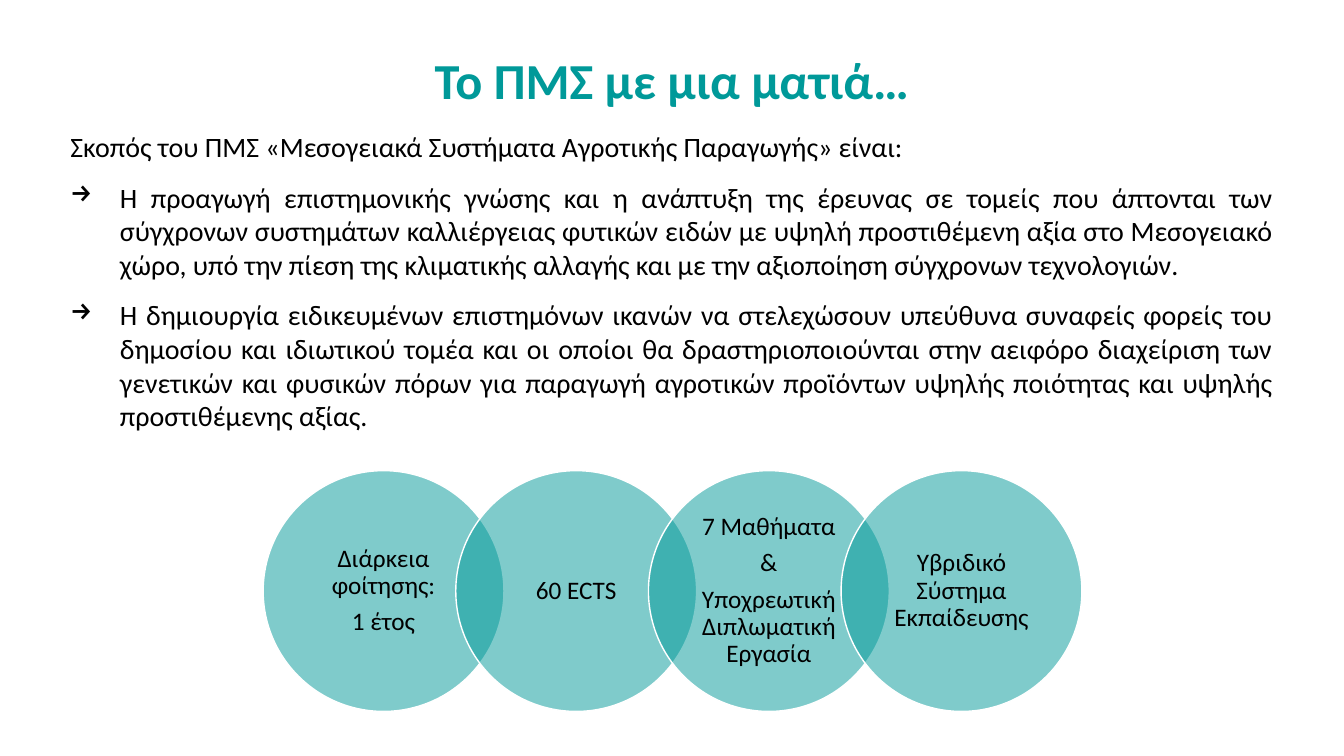
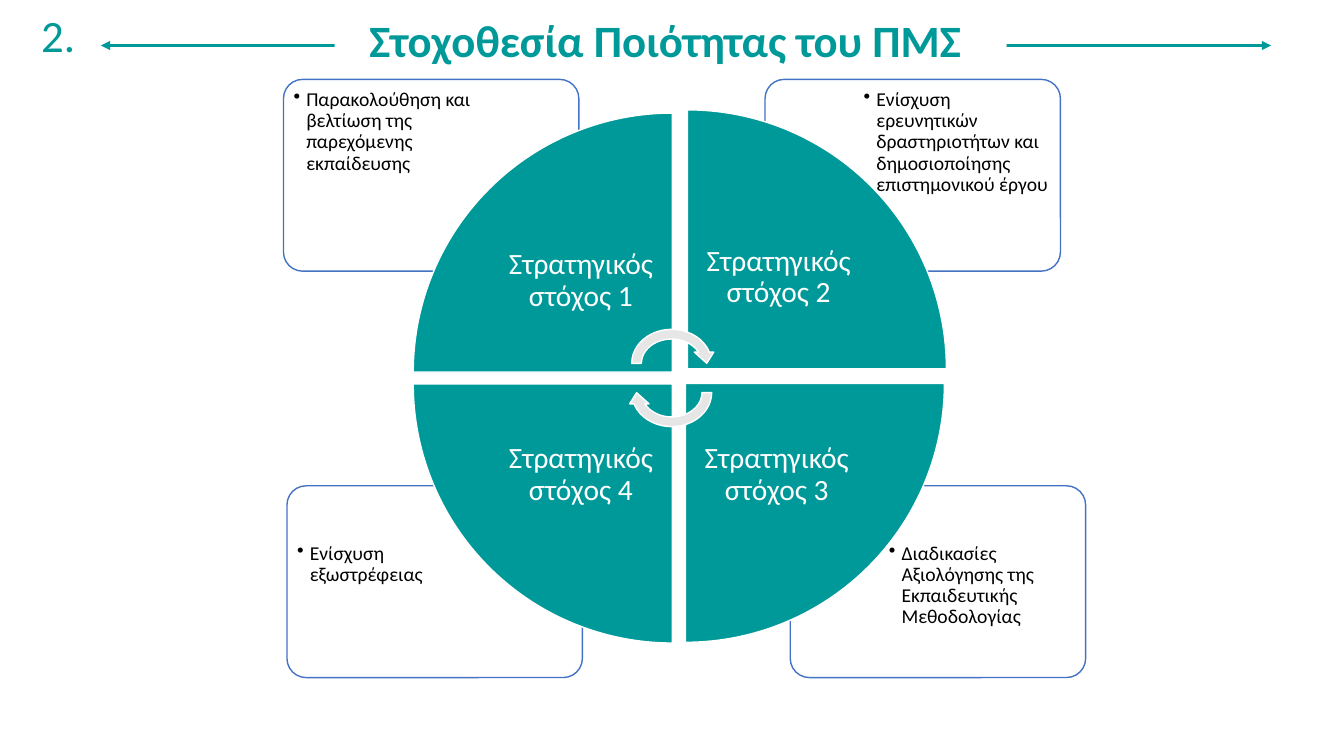
from dataclasses import dataclass
from typing import Sequence

from lxml.etree import SubElement
from pptx import Presentation
from pptx.dml.color import RGBColor
from pptx.enum.shapes import MSO_CONNECTOR, MSO_SHAPE
from pptx.enum.text import MSO_ANCHOR, MSO_AUTO_SIZE, PP_ALIGN
from pptx.oxml.ns import qn
from pptx.shapes.autoshape import Shape
from pptx.slide import Slide
from pptx.util import Pt


@dataclass(frozen=True)
class Theme:
    teal: str = "009999"
    blue: str = "4472C4"
    grey: str = "E7E6E6"
    black: str = "000000"
    white: str = "FFFFFF"
    font: str = "Calibri"
    opening_title: int = 36
    heading: int = 32
    goal: int = 21
    body: int = 20
    fact: int = 18
    card: int = 14


THEME = Theme()
BOX_INSETS = (7.2, 3.6, 7.2, 3.6)


@dataclass(frozen=True)
class Box:
    left: float
    top: float
    width: float
    height: float

    def lengths(self) -> tuple[Pt, Pt, Pt, Pt]:
        return Pt(self.left), Pt(self.top), Pt(self.width), Pt(self.height)


@dataclass(frozen=True)
class Card:
    left: float
    top: float
    text: str
    on_right: bool
    at_bottom: bool


@dataclass(frozen=True)
class Goal:
    left: float
    top: float
    rotation: int
    on_right: bool
    at_bottom: bool


# Shared helpers
def write(shape: Shape, paragraphs: Sequence[str], *, size: float,
          color: str = THEME.black, bold: bool = False,
          align: PP_ALIGN = PP_ALIGN.CENTER,
          anchor: MSO_ANCHOR = MSO_ANCHOR.TOP,
          insets: tuple[float, float, float, float] = BOX_INSETS,
          line_spacing: float = 1.0, space_after: float = 0,
          bullet: str = "", indent: float = 0, plain_lead: int = 0,
          wrap: bool = True) -> None:
    """Fill a shape with text; the first plain_lead paragraphs get no bullet."""
    frame = shape.text_frame
    frame.auto_size = MSO_AUTO_SIZE.NONE
    frame.word_wrap = wrap
    frame.vertical_anchor = anchor
    (frame.margin_left, frame.margin_top,
     frame.margin_right, frame.margin_bottom) = map(Pt, insets)
    for index, text in enumerate(paragraphs):
        paragraph = frame.add_paragraph() if index else frame.paragraphs[0]
        if bullet and index >= plain_lead:
            add_bullet(paragraph, bullet, color, indent)
        paragraph.alignment = align
        paragraph.line_spacing = line_spacing
        paragraph.space_before = Pt(0)
        paragraph.space_after = Pt(space_after)
        run = paragraph.add_run()
        run.text = text
        run.font.name = THEME.font
        run.font.size = Pt(size)
        run.font.bold = bold
        run.font.color.rgb = RGBColor.from_string(color)


def add_bullet(paragraph, symbol: str, color: str, indent: float) -> None:
    properties = paragraph._p.get_or_add_pPr()
    properties.set("marL", str(Pt(indent)))
    properties.set("indent", str(-Pt(indent)))
    bullet_color = SubElement(properties, qn("a:buClr"))
    SubElement(bullet_color, qn("a:srgbClr"), val=color)
    SubElement(properties, qn("a:buChar"), char=symbol)


def add_filled(slide: Slide, preset: MSO_SHAPE, box: Box, fill: str,
               line: str = THEME.white, opacity: int = 100,
               rotation: float = 0) -> Shape:
    shape = slide.shapes.add_shape(preset, *box.lengths())
    shape.shadow.inherit = False
    shape.rotation = rotation
    shape.fill.solid()
    shape.fill.fore_color.rgb = RGBColor.from_string(fill)
    shape.line.color.rgb = RGBColor.from_string(line)
    shape.line.width = Pt(1)
    if opacity < 100:
        fill_color = shape._element.spPr.find(
            f"{qn('a:solidFill')}/{qn('a:srgbClr')}")
        SubElement(fill_color, qn("a:alpha"), val=str(opacity * 1000))
    return shape


def add_text_box(slide: Slide, box: Box) -> Shape:
    return slide.shapes.add_textbox(*box.lengths())


def add_titled_slide(deck, title: str, box: Box, size: float,
                     anchor: MSO_ANCHOR, line_spacing: float = 1.0) -> Slide:
    slide = deck.slides.add_slide(deck.slide_layouts[5])
    heading = slide.shapes.title
    heading.left, heading.top, heading.width, heading.height = box.lengths()
    write(heading, [title], size=size, color=THEME.teal, bold=True,
          anchor=anchor, line_spacing=line_spacing)
    return slide


# Slide 1: the programme at a glance
PURPOSE = [
    "Σκοπός του ΠΜΣ «Μεσογειακά Συστήματα Αγροτικής Παραγωγής» είναι:",
    "Η προαγωγή επιστημονικής γνώσης και η ανάπτυξη της έρευνας σε τομείς "
    "που άπτονται των σύγχρονων συστημάτων καλλιέργειας φυτικών ειδών με "
    "υψηλή προστιθέμενη αξία στο Μεσογειακό χώρο, υπό την πίεση της "
    "κλιματικής αλλαγής και με την αξιοποίηση σύγχρονων τεχνολογιών.",
    "Η δημιουργία ειδικευμένων επιστημόνων ικανών να στελεχώσουν υπεύθυνα "
    "συναφείς φορείς του δημοσίου και ιδιωτικού τομέα και οι οποίοι θα "
    "δραστηριοποιούνται στην αειφόρο διαχείριση των γενετικών και φυσικών "
    "πόρων για παραγωγή αγροτικών προϊόντων υψηλής ποιότητας και υψηλής "
    "προστιθέμενης αξίας.",
]
FACTS = [
    ["Διάρκεια φοίτησης:", "1 έτος"],
    ["60 ECTS"],
    ["7 Μαθήματα", "&", "Υποχρεωτική Διπλωματική Εργασία"],
    ["Υβριδικό Σύστημα Εκπαίδευσης"],
]
CIRCLE_SIZE = 172
CIRCLE_STEP = 0.8 * CIRCLE_SIZE


def build_overview(deck) -> None:
    slide = add_titled_slide(deck, "Το ΠΜΣ με μια ματιά…",
                             Box(0, 40, 960, 42), THEME.opening_title,
                             MSO_ANCHOR.BOTTOM, line_spacing=1.14)
    purpose = add_text_box(slide, Box(43.2, 89.3, 873.4, 225.4))
    write(purpose, PURPOSE, size=THEME.body, align=PP_ALIGN.JUSTIFY,
          space_after=12, bullet="→", indent=35.4, plain_lead=1)
    # Chain of overlapping circles
    for index, fact in enumerate(FACTS):
        circle = add_filled(
            slide, MSO_SHAPE.OVAL,
            Box(188 + index * CIRCLE_STEP, 336.2, CIRCLE_SIZE, CIRCLE_SIZE),
            THEME.teal, opacity=50)
        write(circle, fact, size=THEME.fact, anchor=MSO_ANCHOR.MIDDLE,
              insets=(9.4, 2.2, 9.4, 2.2), line_spacing=0.9, space_after=6.3)


# Slide 2: quality goals
CARDS = [
    Card(564.5, 347, "Διαδικασίες Αξιολόγησης της Εκπαιδευτικής Μεθοδολογίας",
         True, True),
    Card(205, 347, "Ενίσχυση εξωστρέφειας", False, True),
    Card(546.5, 56.7, "Ενίσχυση ερευνητικών δραστηριοτήτων και "
         "δημοσιοποίησης επιστημονικού έργου", True, False),
    Card(202.5, 56.7, "Παρακολούθηση και βελτίωση της παρεχόμενης "
         "εκπαίδευσης", False, False),
]
GOALS = [
    Goal(295.2, 80.8, 0, False, False),
    Goal(491, 78.5, 90, True, False),
    Goal(489.6, 273.8, 180, True, True),
    Goal(295.2, 274.3, 270, False, True),
]
WEDGE_SIZE = 185
LABEL_SIZE = 130.5
CARD_NEAR, CARD_FAR, CARD_DROP = 3.3, 66.5, 37


def add_header_arrow(slide: Slide) -> None:
    arrow = slide.shapes.add_connector(MSO_CONNECTOR.STRAIGHT, Pt(72),
                                       Pt(32.5), Pt(908), Pt(32.5))
    arrow.line.color.rgb = RGBColor.from_string(THEME.teal)
    arrow.line.width = Pt(2.25)
    properties = arrow._element.spPr
    outline = properties.find(qn("a:ln"))
    for end in ("a:headEnd", "a:tailEnd"):
        SubElement(outline, qn(end), type="triangle")
    SubElement(properties, qn("a:effectLst"))
    # The heading's white fill interrupts the arrow
    heading = slide.shapes.title
    heading.fill.solid()
    heading.fill.fore_color.rgb = RGBColor.from_string(THEME.white)
    heading._element.addprevious(arrow._element)


def add_card(slide: Slide, card: Card) -> None:
    panel = add_filled(slide, MSO_SHAPE.ROUNDED_RECTANGLE,
                       Box(card.left, card.top, 211, 137), THEME.white,
                       line=THEME.blue, opacity=90)
    panel.adjustments[0] = 0.1
    left, right = ((CARD_FAR, CARD_NEAR) if card.on_right
                   else (CARD_NEAR, CARD_FAR))
    top = CARD_DROP if card.at_bottom else CARD_NEAR
    write(panel, [card.text], size=THEME.card, align=PP_ALIGN.LEFT,
          insets=(left, top, right, CARD_NEAR), line_spacing=0.9,
          space_after=2.1, bullet="•", indent=9)


def add_goal(slide: Slide, number: int, goal: Goal) -> None:
    add_filled(slide, MSO_SHAPE.PIE_WEDGE,
               Box(goal.left, goal.top, WEDGE_SIZE, WEDGE_SIZE), THEME.teal,
               rotation=goal.rotation)
    # The label sits in the wedge's inner corner
    shift = WEDGE_SIZE - LABEL_SIZE
    label = add_text_box(slide, Box(
        goal.left + (0 if goal.on_right else shift),
        goal.top + (0 if goal.at_bottom else shift), LABEL_SIZE, LABEL_SIZE))
    write(label, [f"Στρατηγικός στόχος {number}"], size=THEME.goal,
          color=THEME.white, anchor=MSO_ANCHOR.MIDDLE,
          insets=(11.5, 11.5, 11.5, 11.5), line_spacing=0.9, space_after=7.4)


def build_goals(deck) -> None:
    slide = add_titled_slide(deck, "Στοχοθεσία Ποιότητας του ΠΜΣ ",
                             Box(239, 5.8, 480, 46), THEME.heading,
                             MSO_ANCHOR.TOP)
    add_header_arrow(slide)
    section_number = add_text_box(slide, Box(22.3, 2.2, 39, 46))
    write(section_number, ["2."], size=THEME.heading, color=THEME.teal,
          align=PP_ALIGN.LEFT, wrap=False)
    for card in CARDS:
        add_card(slide, card)
    for number, goal in enumerate(GOALS, start=1):
        add_goal(slide, number, goal)
    # Cycle arrows at the hub
    for top, rotation in ((231.8, 0), (252.7, 180)):
        add_filled(slide, MSO_SHAPE.CIRCULAR_ARROW,
                   Box(447.8, top, 64, 55.5), THEME.grey, rotation=rotation)


def main() -> None:
    deck = Presentation()
    deck.slide_width, deck.slide_height = Pt(960), Pt(540)
    build_overview(deck)
    build_goals(deck)
    deck.save("out.pptx")


if __name__ == "__main__":
    main()
